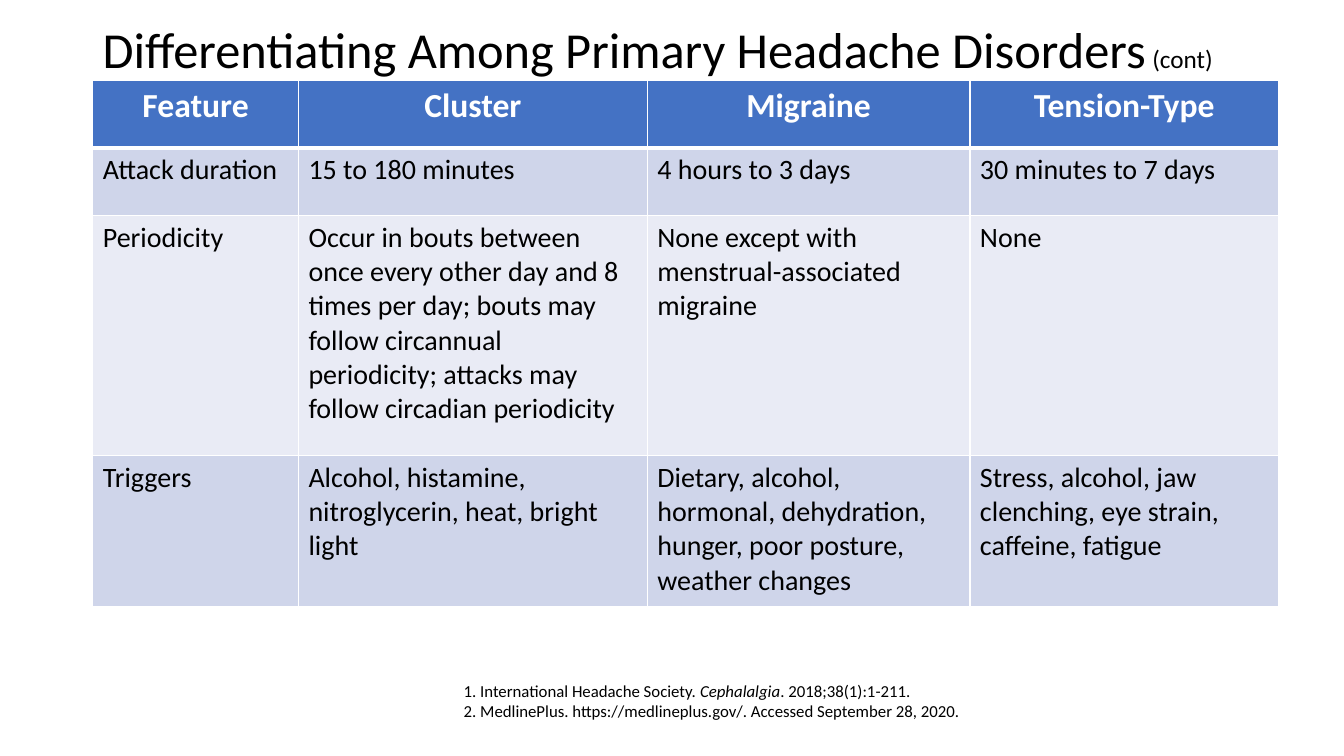
"""Build a slide comparing the features of primary headache disorders."""
from pptx import Presentation
from pptx.dml.color import RGBColor
from pptx.enum.text import MSO_ANCHOR, MSO_AUTO_SIZE, PP_ALIGN
from pptx.oxml import parse_xml
from pptx.oxml.ns import nsdecls
from pptx.util import Inches, Pt

COLORS = {
    "text": "000000",
    "white": "FFFFFF",
    "header": "4472C4",
    "odd_row": "CFD5EA",
    "even_row": "E9EBF5",
}
COLUMN_WIDTHS = [2.04, 3.46, 3.2, 3.06]
ROW_HEIGHTS = [0.67, 0.67, 2.38, 1.5]
ROWS = [
    ["Feature", "Cluster", "Migraine", "Tension-Type"],
    ["Attack duration", "15 to 180 minutes", "4 hours to 3 days", "30 minutes to 7 days"],
    [
        "Periodicity",
        "Occur in bouts between once every other day and 8 times per day; "
        "bouts may follow circannual periodicity; attacks may follow circadian periodicity",
        "None except with menstrual-associated migraine",
        "None",
    ],
    [
        "Triggers",
        "Alcohol, histamine, nitroglycerin, heat, bright light",
        "Dietary, alcohol, hormonal, dehydration, hunger, poor posture, weather changes",
        "Stress, alcohol, jaw clenching, eye strain, caffeine, fatigue",
    ],
]


def add_text(paragraph, text, size=20, color="text", bold=False, italic=False):
    run = paragraph.add_run()
    run.text = text
    run.font.name = "Calibri"
    run.font.size = Pt(size)
    run.font.bold = bold
    run.font.italic = italic
    run.font.color.rgb = RGBColor.from_string(COLORS[color])


def add_border(cell, side, width):
    cell._tc.get_or_add_tcPr().append(parse_xml(
        f'<a:ln{side} {nsdecls("a")} w="{Pt(width)}"><a:solidFill>'
        f'<a:srgbClr val="{COLORS["white"]}"/></a:solidFill></a:ln{side}>'
    ))


presentation = Presentation()
presentation.slide_width = Inches(13.33)
presentation.slide_height = Inches(7.5)
slide = presentation.slides.add_slide(presentation.slide_layouts[6])

title = slide.shapes.add_textbox(Inches(0.92), Inches(0.11), Inches(11.5), Inches(0.82))
title.text_frame.word_wrap = True
title.text_frame.vertical_anchor = MSO_ANCHOR.MIDDLE
heading = title.text_frame.paragraphs[0]
heading.line_spacing = 0.9
add_text(heading, "Differentiating Among Primary Headache Disorders", size=36)
add_text(heading, " (cont)", size=18)

table = slide.shapes.add_table(
    len(ROWS), len(COLUMN_WIDTHS), Inches(0.92), Inches(0.8),
    Inches(sum(COLUMN_WIDTHS)), Inches(sum(ROW_HEIGHTS)),
).table
for column, width in zip(table.columns, COLUMN_WIDTHS):
    column.width = Inches(width)
for row_index, texts in enumerate(ROWS):
    table.rows[row_index].height = Inches(ROW_HEIGHTS[row_index])
    is_header = row_index == 0
    fill = "header" if is_header else "odd_row" if row_index % 2 else "even_row"
    for column_index, text in enumerate(texts):
        cell = table.cell(row_index, column_index)
        add_border(cell, "L", 1)
        add_border(cell, "R", 1)
        add_border(cell, "T", 3 if row_index == 1 else 1)
        add_border(cell, "B", 3 if is_header else 1)
        cell.fill.solid()
        cell.fill.fore_color.rgb = RGBColor.from_string(COLORS[fill])
        paragraph = cell.text_frame.paragraphs[0]
        if is_header:
            paragraph.alignment = PP_ALIGN.CENTER
            add_text(paragraph, text, size=24, color="white", bold=True)
        else:
            add_text(paragraph, text)

references = slide.shapes.add_textbox(Inches(4.5), Inches(6.7), Inches(5.18), Inches(0.5))
references.text_frame.word_wrap = False
references.text_frame.auto_size = MSO_AUTO_SIZE.SHAPE_TO_FIT_TEXT
society = references.text_frame.paragraphs[0]
add_text(society, "1. International Headache Society. ", size=12)
add_text(society, "Cephalalgia", size=12, italic=True)
add_text(society, ". 2018;38(1):1-211.", size=12)
website = references.text_frame.add_paragraph()
add_text(website, "2. MedlinePlus. https://medlineplus.gov/. Accessed September 28, 2020.", size=12)

presentation.save("out.pptx")
